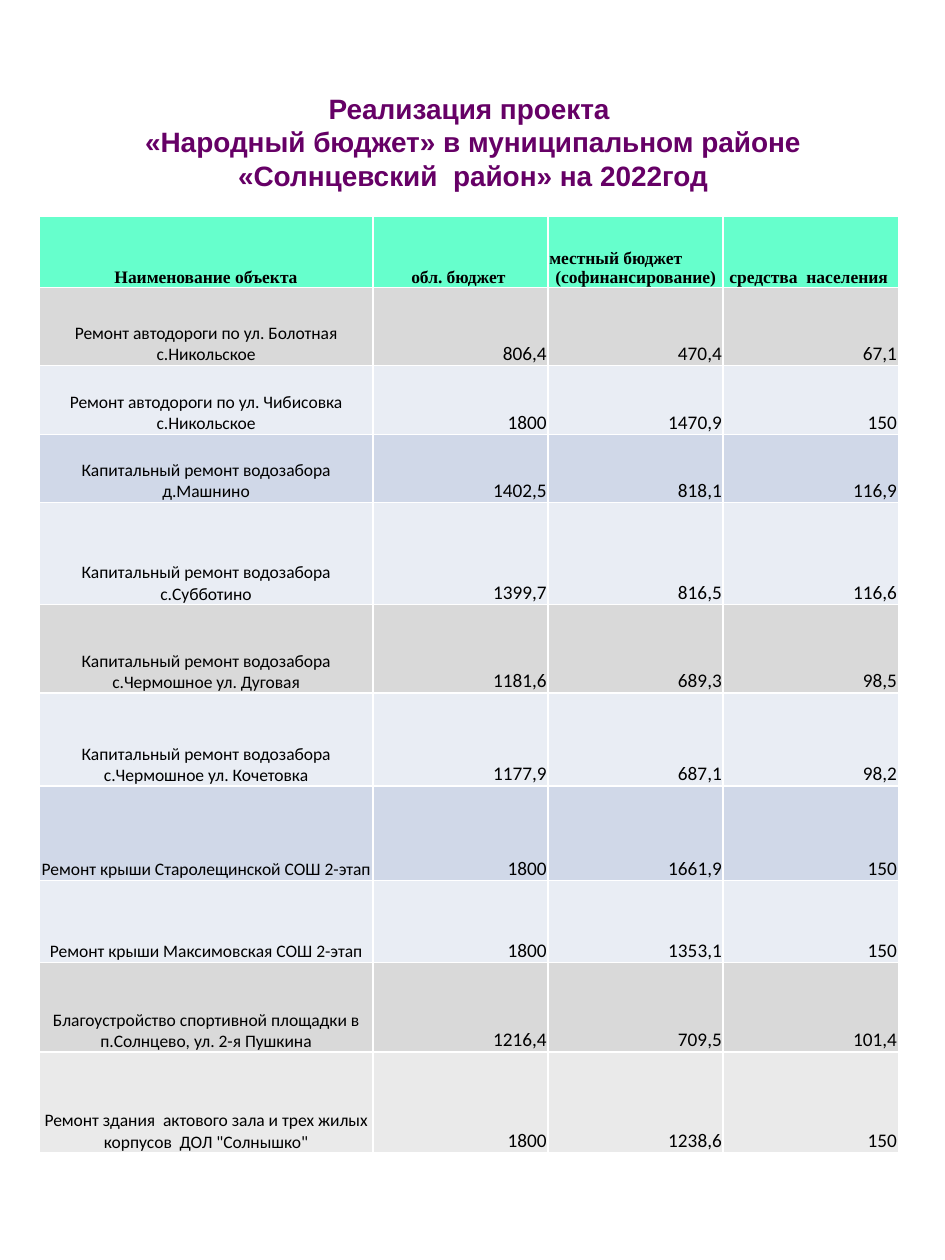
from pptx import Presentation
from pptx.dml.color import RGBColor
from pptx.enum.text import MSO_ANCHOR as Anchor, PP_ALIGN as Align
from pptx.util import Inches, Pt


def color(value):
    return RGBColor.from_string(value)


def style(paragraph, font, size, value, bold, align):
    paragraph.alignment = align
    paragraph.font.name = font
    paragraph.font.size = Pt(size)
    paragraph.font.bold = bold
    paragraph.font.color.rgb = color(value)


GRAY, PALE, BLUE, LIGHT = "D9D9D9", "E9EDF4", "D0D8E8", "EAEAEA"
HEADERS = ["Наименование объекта", "обл. бюджет ",
           "местный бюджет\n(софинансирование)", "средства  населения "]
PROJECTS = [
    (0.62, GRAY, "Ремонт автодороги по ул. Болотная с.Никольское", "806,4", "470,4", "67,1"),
    (0.55, PALE, "Ремонт автодороги по ул. Чибисовка с.Никольское", "1800", "1470,9", "150"),
    (0.54, BLUE, "Капитальный ремонт водозабора д.Машнино", "1402,5", "818,1", "116,9"),
    (0.81, PALE, "Капитальный ремонт водозабора с.Субботино", "1399,7", "816,5", "116,6"),
    (0.7, GRAY, "Капитальный ремонт водозабора с.Чермошное ул. Дуговая", "1181,6", "689,3", "98,5"),
    (0.74, PALE, "Капитальный ремонт водозабора с.Чермошное ул. Кочетовка", "1177,9", "687,1", "98,2"),
    (0.75, BLUE, "Ремонт крыши Старолещинской СОШ 2-этап", "1800", "1661,9", "150"),
    (0.65, PALE, "Ремонт крыши Максимовская СОШ 2-этап", "1800", "1353,1", "150"),
    (0.71, GRAY, "Благоустройство спортивной площадки в п.Солнцево, ул. 2-я Пушкина",
     "1216,4", "709,5", "101,4"),
    (0.8, LIGHT, "Ремонт здания  актового зала и трех жилых корпусов  ДОЛ \"Солнышко\"",
     "1800", "1238,6", "150"),
]
ROWS = [(0.56, "66FFCC", *HEADERS)] + PROJECTS
COLUMN_WIDTHS = [2.65] + [1.39] * 3

presentation = Presentation()
presentation.slide_width, presentation.slide_height = Inches(7.5), Inches(10)
slide = presentation.slides.add_slide(presentation.slide_layouts[6])

title = slide.shapes.add_textbox(Inches(0.38), Inches(0.4), Inches(6.75), Inches(1.45))
title.text_frame.word_wrap = True
title.text_frame.vertical_anchor = Anchor.MIDDLE
paragraph = title.text_frame.paragraphs[0]
paragraph.text = ("Реализация проекта \v"
                  "«Народный бюджет» в муниципальном районе «Солнцевский  район» на 2022год")
style(paragraph, "Arial", 16, "660066", True, Align.CENTER)

table = slide.shapes.add_table(
    len(ROWS), len(COLUMN_WIDTHS), Inches(0.31), Inches(1.72),
    Inches(sum(COLUMN_WIDTHS)), Inches(sum(row[0] for row in ROWS))).table
for column, width in zip(table.columns, COLUMN_WIDTHS):
    column.width = Inches(width)

for row_index, (height, fill, *texts) in enumerate(ROWS):
    table.rows[row_index].height = Inches(height)
    is_header = row_index == 0
    for column_index, text in enumerate(texts):
        cell = table.cell(row_index, column_index)
        cell.fill.solid()
        cell.fill.fore_color.rgb = color(fill)
        cell.vertical_anchor = Anchor.BOTTOM
        cell.margin_left = cell.margin_top = cell.margin_right = Inches(0.01)
        cell.margin_bottom = 0
        cell.text = text
        is_number = not is_header and column_index > 0
        for paragraph in cell.text_frame.paragraphs:
            style(paragraph, "Times New Roman" if is_header else "Calibri",
                  11 if is_number else 10, "000000", is_header,
                  Align.RIGHT if is_number else Align.CENTER)

table.cell(0, 2).text_frame.paragraphs[0].alignment = Align.LEFT

presentation.save("out.pptx")
